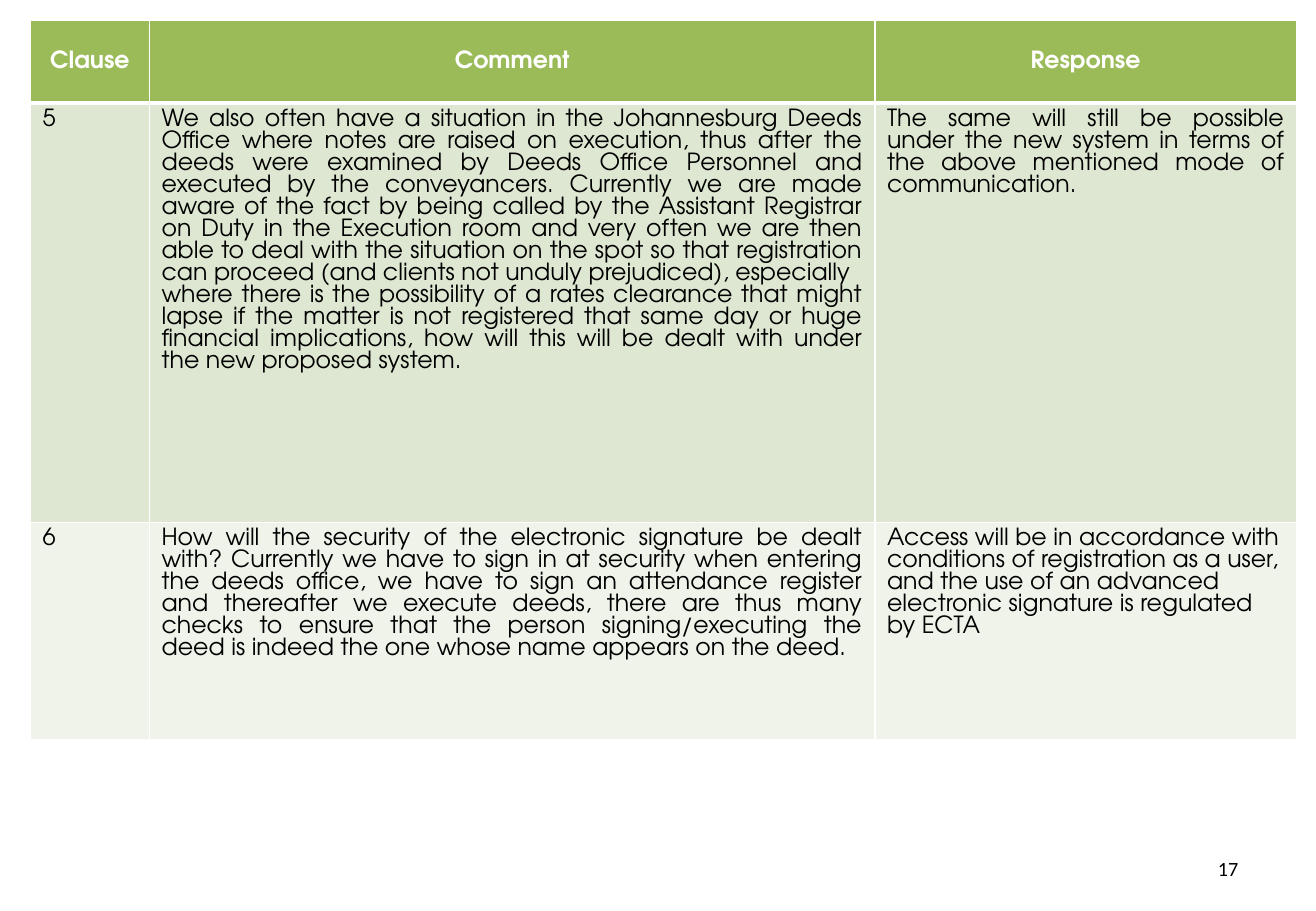
import dataclasses

import lxml.etree
import pptx
import pptx.dml.color
import pptx.enum.text
import pptx.oxml.ns
import pptx.util

Inches = pptx.util.Inches
Pt = pptx.util.Pt
ALIGN = pptx.enum.text.PP_ALIGN
ANCHOR = pptx.enum.text.MSO_ANCHOR


@dataclasses.dataclass(frozen=True)
class Theme:
    font: str = "TeX Gyre Adventor"
    number_font: str = "Calibri"
    text_size: float = 14
    number_size: float = 12
    line_pitch: float = 13
    border: float = 1
    header_border: float = 3
    dark: str = "000000"
    light: str = "FFFFFF"
    header: str = "9BBB59"
    bands: tuple = ("DEE7D1", "EFF3EA")


THEME = Theme()
HEADINGS = ("Clause", "Comment", "Response")
CLAUSES = (
    (
        ("5", ALIGN.LEFT),
        (
            "We also often have a situation in the Johannesburg Deeds Office where notes are raised on "
            "execution, thus after the deeds were examined by Deeds Office Personnel and executed by the "
            "conveyancers. Currently we are made aware of the fact by being called by the Assistant "
            "Registrar on Duty in the Execution room and very often we are then able to deal with the "
            "situation on the spot so that registration can proceed (and clients not unduly prejudiced), "
            "especially \twhere there is the possibility of a rates clearance that might lapse if the "
            "matter is not registered that same day or huge financial implications, how will this will "
            "be dealt with under the new proposed system.",
            ALIGN.JUSTIFY,
        ),
        (
            "The same will still be possible under the new system in terms of the above mentioned mode "
            "of communication.",
            ALIGN.JUSTIFY,
        ),
    ),
    (
        ("6", ALIGN.LEFT),
        (
            "How will the security of the electronic signature be dealt with? Currently we have to sign "
            "in at security when entering the deeds office, we have to sign an attendance register and "
            "thereafter we execute deeds, there are thus many checks to ensure that the person "
            "signing/executing the deed is indeed the one whose name appears on the deed.",
            ALIGN.JUSTIFY,
        ),
        (
            "Access will be in accordance with conditions of registration as a user, and the use of an "
            "advanced electronic signature is regulated by ECTA",
            ALIGN.LEFT,
        ),
    ),
)


def write_text(text_frame, text, *, font=THEME.font, size=THEME.text_size, color=THEME.dark,
               bold=False, align=ALIGN.LEFT, pitch=None):
    paragraph = text_frame.paragraphs[0]
    paragraph.alignment = align
    if pitch:
        paragraph.line_spacing = Pt(pitch)
    run = paragraph.add_run()
    run.text = text
    run.font.name = font
    run.font.size = Pt(size)
    run.font.bold = bold
    run.font.color.rgb = pptx.dml.color.RGBColor.from_string(color)


def style_cell(cell, fill, bottom=THEME.border, top=THEME.border):
    cell.fill.solid()
    cell.fill.fore_color.rgb = pptx.dml.color.RGBColor.from_string(fill)
    properties = cell._tc.get_or_add_tcPr()
    widths = {"a:lnL": THEME.border, "a:lnR": THEME.border, "a:lnT": top, "a:lnB": bottom}
    for index, (side, width) in enumerate(widths.items()):
        line = lxml.etree.Element(pptx.oxml.ns.qn(side), w=str(Pt(width)))
        solid = lxml.etree.SubElement(line, pptx.oxml.ns.qn("a:solidFill"))
        lxml.etree.SubElement(solid, pptx.oxml.ns.qn("a:srgbClr"), val=THEME.light)
        properties.insert(index, line)


def add_clause_table(slide, left, top, column_widths, row_heights):
    table = slide.shapes.add_table(
        len(row_heights), len(column_widths), Inches(left), Inches(top),
        Inches(sum(column_widths)), Inches(sum(row_heights)),
    ).table
    for column, width in zip(table.columns, column_widths):
        column.width = Inches(width)
    for row, height in zip(table.rows, row_heights):
        row.height = Inches(height)
    for cell, heading in zip(table.rows[0].cells, HEADINGS):
        style_cell(cell, THEME.header, bottom=THEME.header_border)
        cell.vertical_anchor = ANCHOR.MIDDLE
        write_text(cell.text_frame, heading, color=THEME.light, bold=True, align=ALIGN.CENTER)
    for index, clause in enumerate(CLAUSES):
        top_border = THEME.border if index else THEME.header_border
        for cell, (text, align) in zip(table.rows[index + 1].cells, clause):
            style_cell(cell, THEME.bands[index % 2], top=top_border)
            write_text(cell.text_frame, text, align=align, pitch=THEME.line_pitch)


def add_page_number(slide, left, top, width, height, number):
    text_frame = slide.shapes.add_textbox(
        Inches(left), Inches(top), Inches(width), Inches(height)).text_frame
    text_frame.word_wrap = True
    text_frame.vertical_anchor = ANCHOR.MIDDLE
    write_text(text_frame, number, font=THEME.number_font, size=THEME.number_size, align=ALIGN.RIGHT)


def main():
    presentation = pptx.Presentation()
    presentation.slide_width = Inches(10.83)
    presentation.slide_height = Inches(7.5)
    slide = presentation.slides.add_slide(presentation.slide_layouts[6])
    add_clause_table(slide, 0.25, 0.17, (0.98, 5.97, 3.47), (0.68, 3.45, 1.79))
    add_page_number(slide, 7.76, 6.95, 2.53, 0.4, "17")
    presentation.save("out.pptx")


if __name__ == "__main__":
    main()
